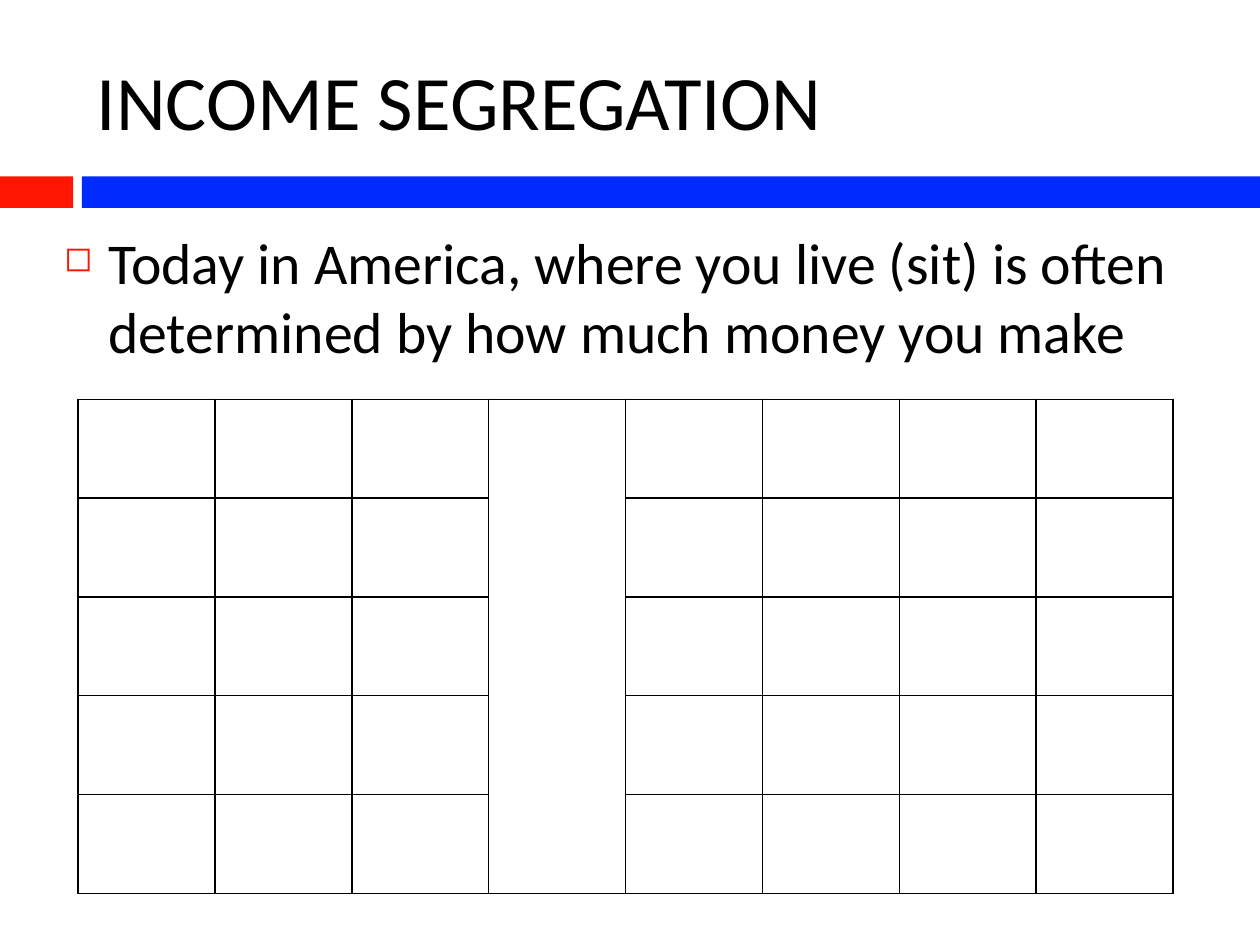
import pptx
import pptx.dml.color
import pptx.enum.shapes
import pptx.enum.text
import pptx.oxml.ns
import pptx.util
from lxml import etree
from pptx.util import Inches

RED = pptx.dml.color.RGBColor(0xFF, 0x15, 0x00)
BLUE = pptx.dml.color.RGBColor(0x00, 0x2B, 0xFF)
BLACK = pptx.dml.color.RGBColor(0x00, 0x00, 0x00)
FONT = "Calibri"

TITLE = "INCOME SEGREGATION"
BODY = ("Today in America, where you live (sit) is often "
        "determined by how much money you make")
BANDS = [(0, 0.58, RED), (0.65, 9.35, BLUE)]  # left, width, colour
BAND_TOP, BAND_HEIGHT = 1.4, 0.25

SEAT_ROWS, SEAT_COLUMNS = 5, 8
AISLE_COLUMN = 3
SEATING_BOX = (0.62, 3.17, 8.69, 3.92)


def add_child(parent, tag, **attributes):
    return etree.SubElement(parent, pptx.oxml.ns.qn(tag), attributes)


def add_text(slide, box, text, size, anchor):
    shape = slide.shapes.add_textbox(*map(Inches, box))
    frame = shape.text_frame
    frame.word_wrap = True
    frame.vertical_anchor = anchor
    paragraph = frame.paragraphs[0]
    paragraph.text = text
    paragraph.font.name = FONT
    paragraph.font.size = pptx.util.Pt(size)
    paragraph.font.color.rgb = BLACK
    return paragraph


def add_bullet(paragraph, character, color, percent, indent):
    properties = paragraph._p.get_or_add_pPr()
    properties.set("marL", str(Inches(indent)))
    properties.set("indent", str(Inches(-indent)))
    bullet_color = etree.Element(pptx.oxml.ns.qn("a:buClr"))
    add_child(bullet_color, "a:srgbClr", val=str(color))
    bullet_size = etree.Element(pptx.oxml.ns.qn("a:buSzPct"), val=str(percent * 1000))
    bullet = etree.Element(pptx.oxml.ns.qn("a:buChar"), char=character)
    default_run = properties.find(pptx.oxml.ns.qn("a:defRPr"))
    for element in (bullet_color, bullet_size, bullet):
        default_run.addprevious(element)


def outline_cell(cell, color, width):
    properties = cell._tc.get_or_add_tcPr()
    for position, side in enumerate(("a:lnL", "a:lnR", "a:lnT", "a:lnB")):
        line = add_child(properties, side, w=str(pptx.util.Pt(width)))
        fill = add_child(line, "a:solidFill")
        add_child(fill, "a:srgbClr", val=str(color))
        properties.insert(position, line)


def add_seating(slide):
    left, top, width, height = map(Inches, SEATING_BOX)
    table = slide.shapes.add_table(
        SEAT_ROWS, SEAT_COLUMNS, left, top, width, height).table
    table.first_row = False
    table.horz_banding = False
    for cell in table.iter_cells():
        cell.fill.background()
        outline_cell(cell, BLACK, 1)
    table.cell(0, AISLE_COLUMN).merge(table.cell(SEAT_ROWS - 1, AISLE_COLUMN))


def main():
    presentation = pptx.Presentation()
    presentation.slide_width = Inches(10)
    presentation.slide_height = Inches(7.5)
    slide = presentation.slides.add_slide(presentation.slide_layouts[6])

    for left, width, color in BANDS:
        band = slide.shapes.add_shape(
            pptx.enum.shapes.MSO_SHAPE.RECTANGLE,
            *map(Inches, (left, BAND_TOP, width, BAND_HEIGHT)))
        band.shadow.inherit = False
        band.fill.solid()
        band.fill.fore_color.rgb = color
        band.line.fill.background()

    anchors = pptx.enum.text.MSO_ANCHOR
    add_text(slide, (0.67, 0.25, 8.92, 1.08), TITLE, 44, anchors.MIDDLE)
    body = add_text(slide, (0.41, 1.75, 9.18, 4.92), BODY, 33, anchors.TOP)
    body.space_before = pptx.util.Pt(7)
    add_bullet(body, "◻", RED, 60, 0.35)
    add_seating(slide)

    presentation.save("out.pptx")


if __name__ == "__main__":
    main()
